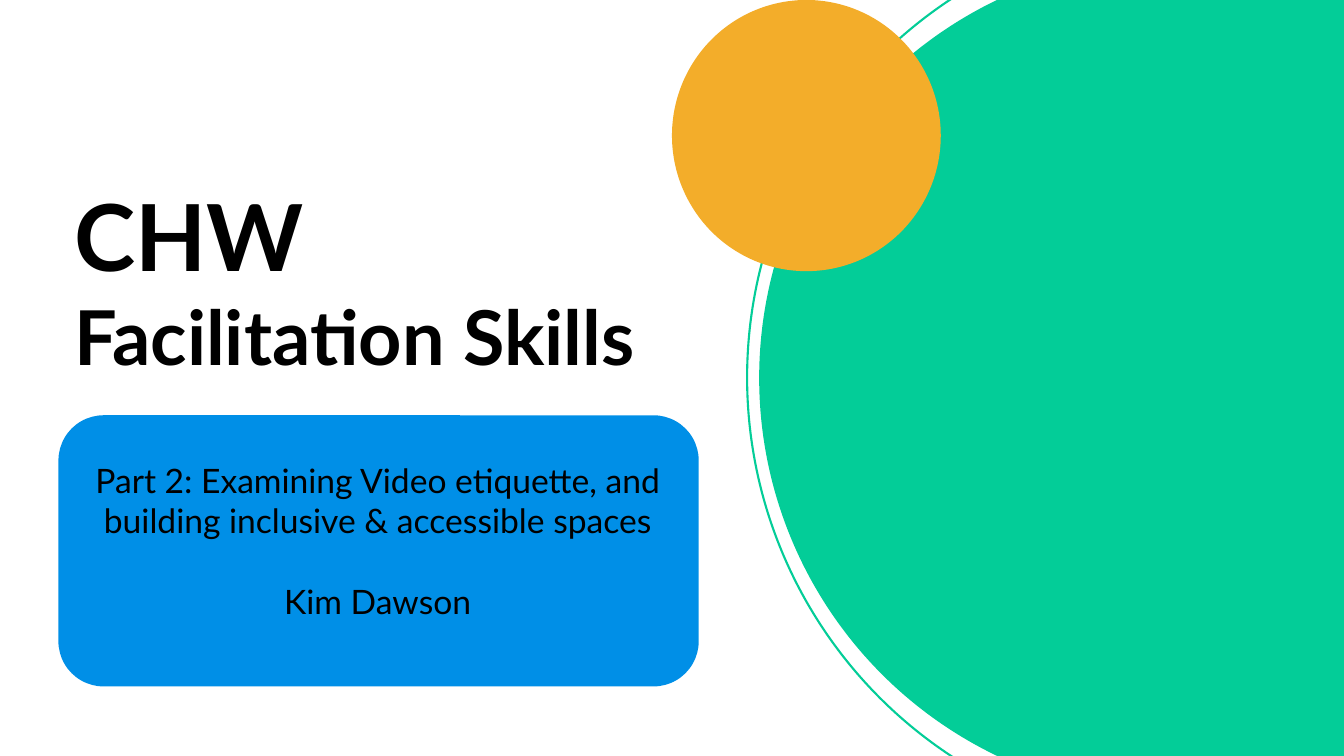
"""Build the title slide of a facilitation skills training."""
from dataclasses import dataclass

from pptx import Presentation
from pptx import util as u
from pptx.dml.color import RGBColor
from pptx.enum import shapes, text


@dataclass(frozen=True)
class Theme:
    font: str = "Lato"
    ink: str = "000000"
    blue: str = "008FE7"
    green: str = "03CD98"
    orange: str = "F3AD2A"
    heading: int = 66
    subheading: int = 54
    body: int = 24
    ring_line: float = 1.5


THEME = Theme()
SLIDE_SIZE = (u.Inches(13.33), u.Inches(7.5))

TITLE = [[("CHW ", THEME.heading), ("Facilitation Skills", THEME.subheading)]]
SUBTITLE = [
    [("Part 2: Examining Video etiquette, and building inclusive & accessible spaces", THEME.body)],
    [("Kim Dawson", THEME.body)],
]

# Left, top, width and height as percentages of the slide.
PANEL_BOX = (4.35, 54.93, 47.64, 35.87)
DISC_BOX = (56.49, -5.47, 62.42, 110.93)
RING_BOX = (55.59, -10, 67.44, 119.87)
TITLE_BOX = (4.8, 23.07, 46.74, 28.27)
SUBTITLE_BOX = (6.23, 60.13, 43.74, 28.27)
DOT_BOX = (50, 0, 20, 35.87)


def place(box):
    """Turn percentages of the slide into lengths."""
    return [round(share / 100 * SLIDE_SIZE[i % 2]) for i, share in enumerate(box)]


def add_figure(slide, kind, box, fill=None, line=None):
    """Add a flat preset shape."""
    shape = slide.shapes.add_shape(kind, *place(box))
    shape.shadow.inherit = False
    if fill:
        shape.fill.solid()
        shape.fill.fore_color.rgb = RGBColor.from_string(fill)
    else:
        shape.fill.background()
    if line:
        shape.line.color.rgb = RGBColor.from_string(line)
        shape.line.width = u.Pt(THEME.ring_line)
    else:
        shape.line.fill.background()


def write(slide, placeholder, box, paragraphs, align, bold=False, gap=0):
    """Move a placeholder to the front and fill it with formatted text."""
    slide.shapes.element.append(placeholder.element)
    placeholder.left, placeholder.top, placeholder.width, placeholder.height = place(box)
    frame = placeholder.text_frame
    frame.word_wrap = True
    frame.auto_size = text.MSO_AUTO_SIZE.NONE
    frame.vertical_anchor = text.MSO_ANCHOR.TOP
    for index, runs in enumerate(paragraphs):
        paragraph = frame.add_paragraph() if index else frame.paragraphs[0]
        paragraph.alignment = align
        paragraph.line_spacing = 1.0
        paragraph.space_before = u.Pt(gap if index else 0)
        paragraph.space_after = u.Pt(0)
        for words, size in runs:
            run = paragraph.add_run()
            run.text = words
            run.font.name = THEME.font
            run.font.size = u.Pt(size)
            run.font.bold = bold
            run.font.color.rgb = RGBColor.from_string(THEME.ink)


def main():
    """Lay out the slide from back to front."""
    presentation = Presentation()
    presentation.slide_width, presentation.slide_height = SLIDE_SIZE
    slide = presentation.slides.add_slide(presentation.slide_layouts[0])
    oval = shapes.MSO_SHAPE.OVAL
    add_figure(slide, shapes.MSO_SHAPE.ROUNDED_RECTANGLE, PANEL_BOX, fill=THEME.blue)
    add_figure(slide, oval, DISC_BOX, fill=THEME.green)
    add_figure(slide, oval, RING_BOX, line=THEME.green)
    write(slide, slide.shapes.title, TITLE_BOX, TITLE, text.PP_ALIGN.LEFT, bold=True)
    write(slide, slide.placeholders[1], SUBTITLE_BOX, SUBTITLE, text.PP_ALIGN.CENTER,
          gap=THEME.body * 1.2)
    add_figure(slide, oval, DOT_BOX, fill=THEME.orange)
    presentation.save("out.pptx")


if __name__ == "__main__":
    main()
